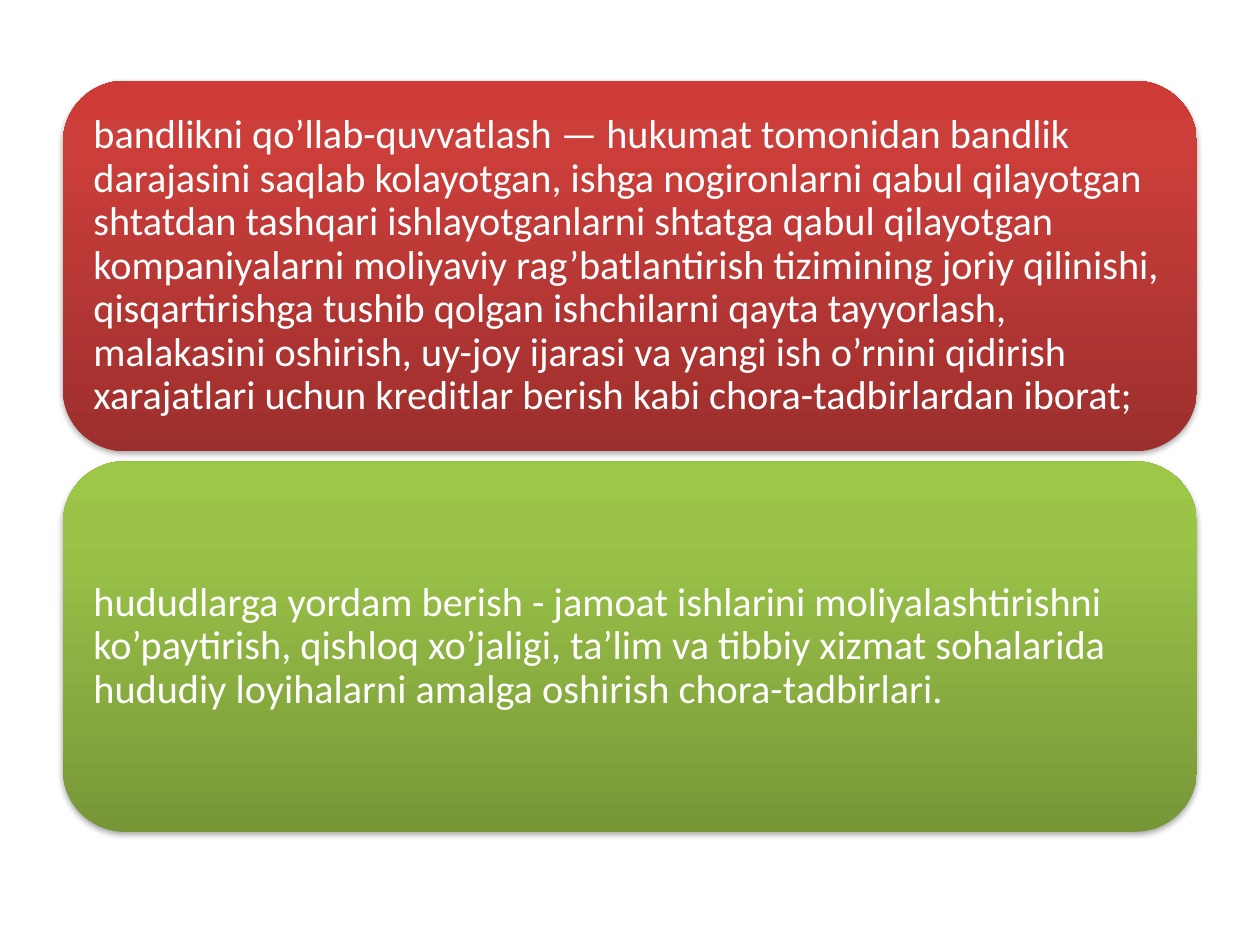
from copy import deepcopy
from dataclasses import dataclass

from lxml import etree
from pptx import Presentation
from pptx import util as u
from pptx.dml.color import RGBColor
from pptx.enum import shapes, text
from pptx.oxml import ns
from pptx.slide import Slide


@dataclass(frozen=True)
class Theme:
    font: str = "Calibri"
    size: float = 23
    ink: str = "FFFFFF"
    shadow: str = "000000"
    red: tuple[str, ...] = ("9C2F2D", "CB3E3A", "CE3B37")
    green: tuple[str, ...] = ("779737", "9BC348", "9DC746")
    stops: tuple[float, ...] = (0, 0.8, 1)


@dataclass(frozen=True)
class Panel:
    wording: str
    gradient: tuple[str, ...]


THEME = Theme()
LEFT, TOP, WIDTH, HEIGHT, GAP = 1.27, 1.63, 22.86, 7.47, 0.2

PANELS = [
    Panel(
        "bandlikni qo’llab-quvvatlash — hukumat tomonidan bandlik darajasini saqlab "
        "kolayotgan, ishga nogironlarni qabul qilayotgan shtatdan tashqari "
        "ishlayotganlarni shtatga qabul qilayotgan kompaniyalarni moliyaviy "
        "rag’batlantirish tizimining joriy qilinishi, qisqartirishga tushib qolgan "
        "ishchilarni qayta tayyorlash, malakasini oshirish, uy-joy ijarasi va yangi "
        "ish o’rnini qidirish xarajatlari uchun kreditlar berish kabi "
        "chora-tadbirlardan iborat;",
        THEME.red,
    ),
    Panel(
        "hududlarga yordam berish - jamoat ishlarini moliyalashtirishni ko’paytirish, "
        "qishloq xo’jaligi, ta’lim va tibbiy xizmat sohalarida hududiy loyihalarni "
        "amalga oshirish chora-tadbirlari.",
        THEME.green,
    ),
]


def paint_gradient(box, colours: tuple[str, ...]) -> None:
    """Fill from the bottom edge up, with one stop per colour."""
    box.fill.gradient()
    box.fill.gradient_angle = 90
    stop_list = box._element.spPr.find(".//" + ns.qn("a:gsLst"))
    stop_list.append(deepcopy(stop_list[-1]))
    for stop, position, colour in zip(box.fill.gradient_stops, THEME.stops, colours):
        stop.position = position
        stop.color.rgb = RGBColor.from_string(colour)


def cast_shadow(box) -> None:
    """Add a soft shadow straight below the box."""
    box.shadow.inherit = False
    effects = box._element.spPr.find(ns.qn("a:effectLst"))
    outer = etree.SubElement(
        effects, ns.qn("a:outerShdw"), blurRad=str(u.Pt(3.1)), dist=str(u.Pt(1.8)),
        dir="5400000", rotWithShape="0")
    colour = etree.SubElement(outer, ns.qn("a:srgbClr"), val=THEME.shadow)
    etree.SubElement(colour, ns.qn("a:alpha"), val="35000")


def draw_panel(page: Slide, panel: Panel, top: float) -> None:
    box = page.shapes.add_shape(
        shapes.MSO_SHAPE.ROUNDED_RECTANGLE,
        u.Cm(LEFT), u.Cm(top), u.Cm(WIDTH), u.Cm(HEIGHT))
    paint_gradient(box, panel.gradient)
    box.line.fill.background()
    cast_shadow(box)

    frame = box.text_frame
    frame.word_wrap = True
    frame.vertical_anchor = text.MSO_ANCHOR.MIDDLE
    frame.margin_left = frame.margin_right = u.Cm(0.25)
    frame.margin_top = frame.margin_bottom = u.Cm(0.25)
    frame.text = panel.wording
    para = frame.paragraphs[0]
    para.alignment = text.PP_ALIGN.LEFT
    para.line_spacing = 0.9
    span = para.runs[0]
    span.font.name = THEME.font
    span.font.size = u.Pt(THEME.size)
    span.font.color.rgb = RGBColor.from_string(THEME.ink)


def main() -> None:
    deck = Presentation()
    deck.slide_width, deck.slide_height = u.Cm(25.4), u.Cm(19.05)
    # The page has no title, so it uses the blank layout
    page = deck.slides.add_slide(deck.slide_layouts[6])
    # Two equal panels, stacked
    for row, panel in enumerate(PANELS):
        draw_panel(page, panel, TOP + row * (HEIGHT + GAP))
    deck.save("out.pptx")


if __name__ == "__main__":
    main()
